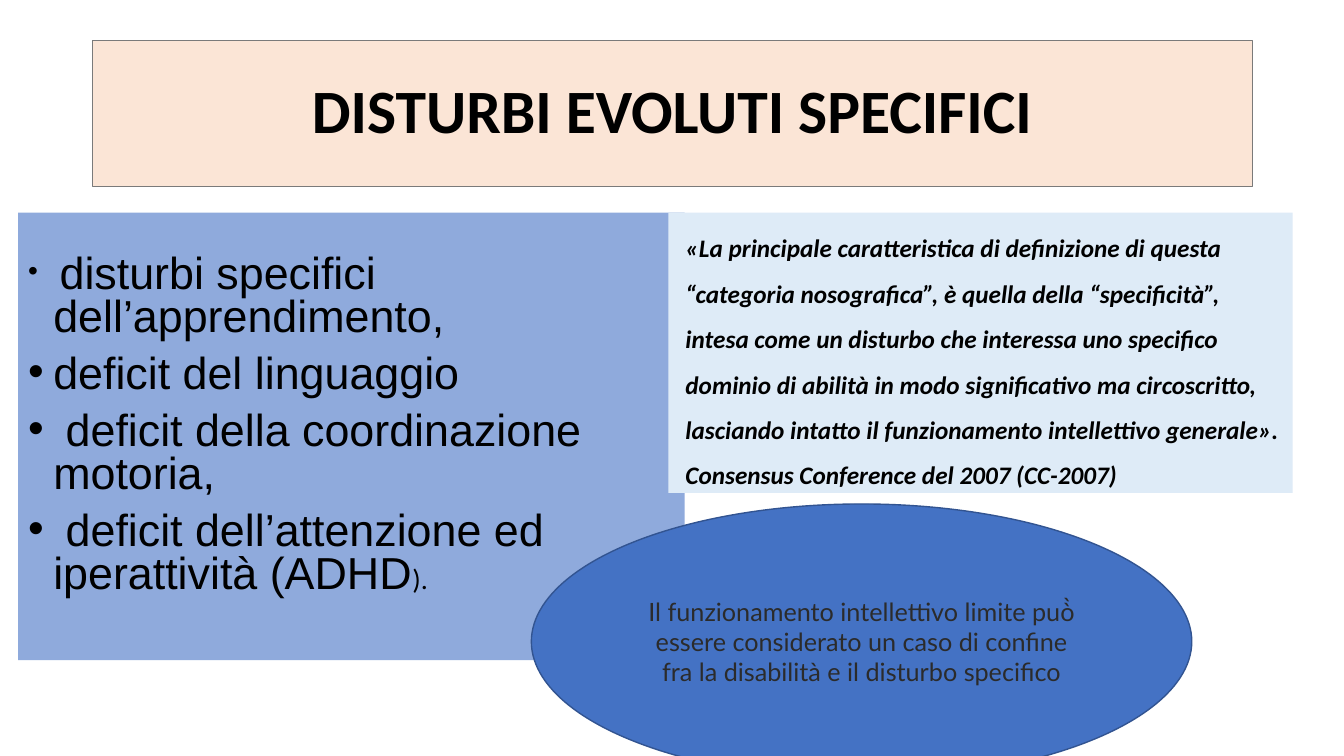
from dataclasses import dataclass

from lxml import etree
from pptx import Presentation, util as u
from pptx.dml.color import RGBColor
from pptx.enum import shapes, text
from pptx.oxml.ns import qn


@dataclass(frozen=True)
class Theme:
    """Colours, fonts and type sizes of the slide."""
    ink: str = "000000"
    soft_ink: str = "2B2B2B"
    peach: str = "FBE5D6"
    peach_edge: str = "7A7A7A"
    periwinkle: str = "8FAADC"
    pale_blue: str = "DEEBF7"
    blue: str = "4472C4"
    blue_edge: str = "325491"
    heading_font: str = "Calibri"
    list_font: str = "Arial"
    remark_font: str = "Lato"
    heading: int = 44
    item: int = 32
    small: int = 20
    body: int = 18


THEME = Theme()
WIDTH, HEIGHT = 13.33, 7.5

DISORDERS = [
    [(" ", True), ("disturbi specifici dell’apprendimento,", False)],
    [("deficit del linguaggio", False)],
    [(" deficit della coordinazione motoria,", False)],
    [(" deficit dell’attenzione ed iperattività (ADHD", False), (").", True)],
]
DEFINITION = (
    "«La principale caratteristica di definizione di questa “categoria nosografica”, "
    "è quella della “specificità”, intesa come un disturbo che interessa uno specifico "
    "dominio di abilità in modo significativo ma circoscritto, lasciando intatto il "
    "funzionamento intellettivo generale». Consensus Conference del 2007 (CC-2007)"
)
BORDERLINE = (
    "Il funzionamento intellettivo limite può̀ essere considerato un caso di confine "
    "fra la disabilità e il disturbo specifico"
)


def place(shape, box):
    """Move a shape to a box given as left, top, width and height in inches."""
    shape.left, shape.top, shape.width, shape.height = map(u.Inches, box)


def paint(shape, fill, edge=None):
    """Give a shape a solid fill and an optional thin outline."""
    shape.fill.solid()
    shape.fill.fore_color.rgb = RGBColor.from_string(fill)
    if edge:
        shape.line.color.rgb = RGBColor.from_string(edge)
        shape.line.width = u.Pt(1)
    else:
        shape.line.fill.background()


def add_panel(slide, kind, box, fill, edge=None, anchor=text.MSO_ANCHOR.TOP):
    """Draw a flat shape that wraps its text."""
    panel = slide.shapes.add_shape(kind, *map(u.Inches, box))
    panel.shadow.inherit = False
    paint(panel, fill, edge)
    panel.text_frame.word_wrap = True
    panel.text_frame.vertical_anchor = anchor
    return panel


def write(paragraph, words, *, size, font, color=THEME.ink, bold=False, italic=False,
          align=text.PP_ALIGN.LEFT, spacing=1.0, before=0):
    """Append a formatted run and set the format of its paragraph."""
    paragraph.alignment = align
    paragraph.line_spacing = spacing
    paragraph.space_before = u.Pt(before)
    run = paragraph.add_run()
    run.text = words
    run.font.size = u.Pt(size)
    run.font.name = font
    run.font.bold = bold
    run.font.italic = italic
    run.font.color.rgb = RGBColor.from_string(color)


def set_indent(paragraph, left, bullet=None):
    """Indent a paragraph in inches and hang an optional bullet before it."""
    props = paragraph._p.get_or_add_pPr()
    props.set("marL", str(u.Inches(left)))
    props.set("indent", str(-u.Inches(left) if bullet else 0))
    if bullet:
        etree.SubElement(props, qn("a:buFont")).set("typeface", THEME.list_font)
        etree.SubElement(props, qn("a:buChar")).set("char", bullet)


def build_title(slide, box):
    """Format the title placeholder as a peach banner."""
    title = slide.shapes.title
    place(title, box)
    paint(title, THEME.peach, THEME.peach_edge)
    title.text_frame.vertical_anchor = text.MSO_ANCHOR.MIDDLE
    write(title.text_frame.paragraphs[0], "DISTURBI EVOLUTI SPECIFICI",
          size=THEME.heading, font=THEME.heading_font, bold=True,
          align=text.PP_ALIGN.CENTER, spacing=0.9)


def build_disorders(slide, box):
    """Draw the bulleted list of disorders."""
    frame = add_panel(slide, shapes.MSO_SHAPE.RECTANGLE, box, THEME.periwinkle).text_frame
    frame.margin_top = u.Inches(0.42)
    for index, pieces in enumerate(DISORDERS):
        item = frame.add_paragraph() if index else frame.paragraphs[0]
        for words, is_small in pieces:
            write(item, words, spacing=0.8, before=10,
                  size=THEME.small if is_small else THEME.item,
                  font=THEME.heading_font if is_small else THEME.list_font)
        set_indent(item, 0.25, "•")


def build_definition(slide, box):
    """Draw the quoted definition."""
    panel = add_panel(slide, shapes.MSO_SHAPE.RECTANGLE, box, THEME.pale_blue)
    quote = panel.text_frame.paragraphs[0]
    write(quote, DEFINITION, size=THEME.body, font=THEME.heading_font,
          bold=True, italic=True, spacing=1.5)
    set_indent(quote, 0.07)


def build_borderline(slide, box):
    """Draw the ellipse with the remark on borderline functioning."""
    ellipse = add_panel(slide, shapes.MSO_SHAPE.OVAL, box, THEME.blue,
                        THEME.blue_edge, text.MSO_ANCHOR.MIDDLE)
    write(ellipse.text_frame.paragraphs[0], BORDERLINE, size=THEME.body,
          font=THEME.remark_font, color=THEME.soft_ink, align=text.PP_ALIGN.CENTER)


def main():
    """Build the slide and save it."""
    deck = Presentation()
    deck.slide_width, deck.slide_height = u.Inches(WIDTH), u.Inches(HEIGHT)
    slide = deck.slides.add_slide(deck.slide_layouts[5])
    row = 2.11
    build_title(slide, (0.92, 0.4, 11.5, 1.45))
    build_disorders(slide, (0.18, row, 6.61, 4.44))
    build_definition(slide, (6.63, row, 6.19, 2.78))
    build_borderline(slide, (5.27, 5, 6.55, 2.73))
    deck.save("out.pptx")


if __name__ == "__main__":
    main()
